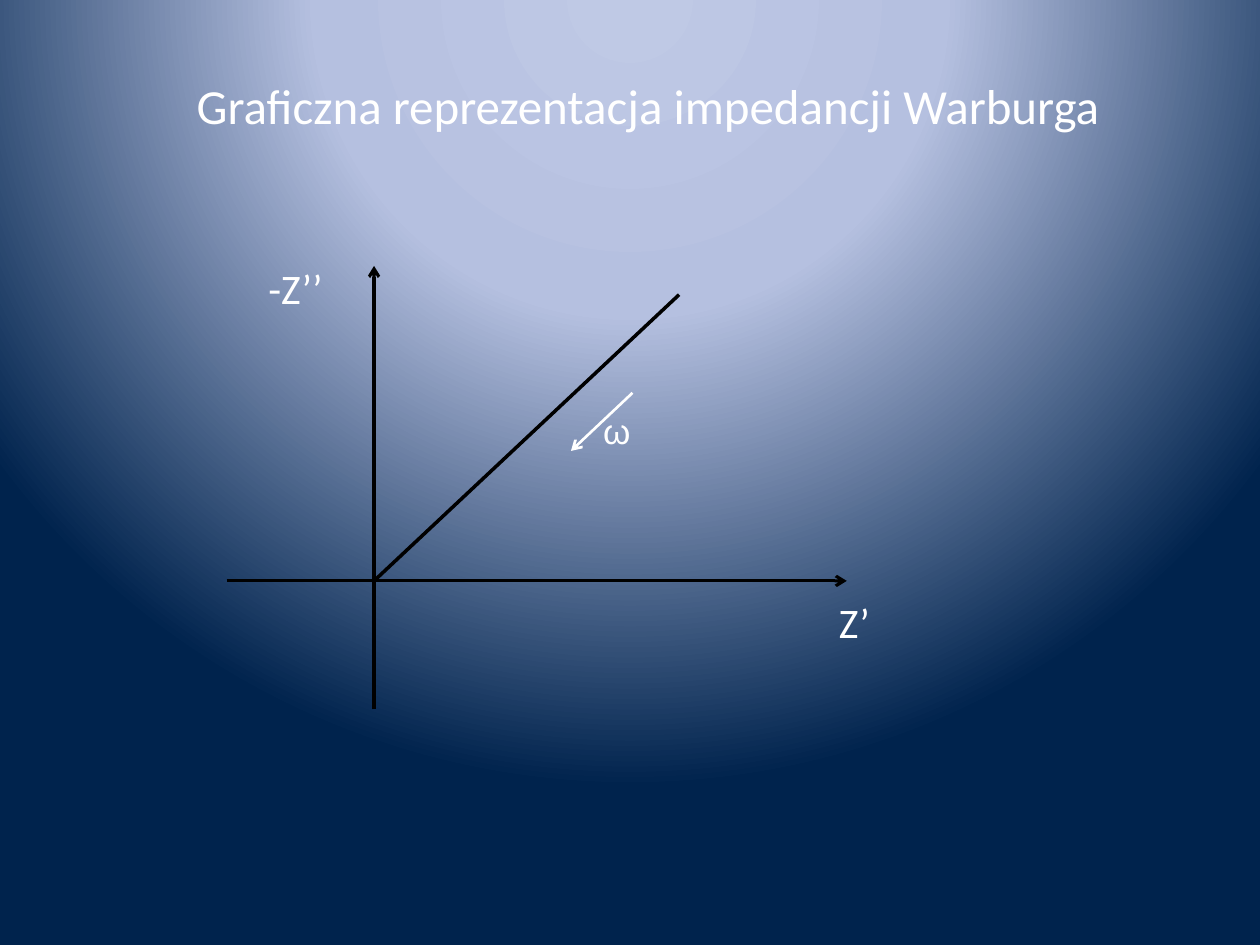
"""Build a slide with the Nyquist plot of the Warburg impedance."""
from dataclasses import dataclass

from lxml.etree import SubElement
from pptx import Presentation
from pptx.dml.color import RGBColor
from pptx.enum.shapes import MSO_CONNECTOR as Connector
from pptx.enum.text import MSO_ANCHOR as Anchor, MSO_AUTO_SIZE as AutoSize, PP_ALIGN as Align
from pptx.oxml import parse_xml
from pptx.oxml.ns import nsdecls, qn
from pptx.shapes.base import BaseShape
from pptx.slide import Slide
from pptx.util import Cm, Pt

WHITE = RGBColor(0xFF, 0xFF, 0xFF)
BLACK = RGBColor(0x00, 0x00, 0x00)
GRADIENT = (
    (0, RGBColor(0xBF, 0xC9, 0xE5)),
    (40, RGBColor(0xB5, 0xC0, 0xE0)),
    (100, RGBColor(0x00, 0x23, 0x4D)),
)
ORIGIN_X, ORIGIN_Y = 7.54, 11.71


@dataclass
class Label:
    text: str
    left: float
    top: float
    width: float
    height: float
    size: float
    font: str = "Calibri"


@dataclass
class Line:
    start: tuple[float, float]
    end: tuple[float, float]
    width: float
    color: RGBColor = BLACK
    arrow: bool = True


TITLE = Label("Graficzna reprezentacja impedancji Warburga", 3.71, 1.4, 18.9, 1.45, 28)
LABELS = (
    Label("Z’", 16.66, 11.91, 1.14, 1.27, 24),
    Label("-Z’’", 5.16, 5.16, 1.63, 1.27, 24),
    Label("ω", 11.91, 8.13, 0.99, 1.12, 20, "Arial"),
)
LINES = (
    Line((4.57, ORIGIN_Y), (17.07, ORIGIN_Y), 1.75),
    Line((ORIGIN_X, 14.3), (ORIGIN_X, 5.36), 1.75),
    Line((ORIGIN_X, ORIGIN_Y), (13.69, 5.94), 2, arrow=False),
    Line((12.75, 7.92), (11.51, 9.09), 1.5, WHITE),
)


def set_background(slide: Slide) -> None:
    """Fill the background with a circular gradient centred above the slide."""
    stops = "".join(
        f'<a:gs pos="{position * 1000}"><a:srgbClr val="{color}"/></a:gs>'
        for position, color in GRADIENT
    )
    background = parse_xml(
        f'<p:bg {nsdecls("p", "a")}><p:bgPr><a:gradFill rotWithShape="1">'
        f'<a:gsLst>{stops}</a:gsLst><a:path path="circle">'
        '<a:fillToRect l="50000" t="-80000" r="50000" b="180000"/></a:path>'
        "</a:gradFill><a:effectLst/></p:bgPr></p:bg>"
    )
    slide.element.find(qn("p:cSld")).insert(0, background)


def write_label(shape: BaseShape, label: Label) -> None:
    """Place a shape and write its text."""
    shape.left, shape.top = Cm(label.left), Cm(label.top)
    shape.width, shape.height = Cm(label.width), Cm(label.height)
    frame = shape.text_frame
    frame.word_wrap = False
    frame.auto_size = AutoSize.SHAPE_TO_FIT_TEXT
    frame.vertical_anchor = Anchor.TOP
    paragraph = frame.paragraphs[0]
    paragraph.alignment = Align.LEFT
    run = paragraph.add_run()
    run.text = label.text
    run.font.name = label.font
    run.font.size = Pt(label.size)
    run.font.color.rgb = WHITE


def add_line(slide: Slide, line: Line) -> None:
    """Draw a straight line, with an open arrowhead if asked for."""
    connector = slide.shapes.add_connector(
        Connector.STRAIGHT, *map(Cm, line.start), *map(Cm, line.end)
    )
    connector.line.color.rgb = line.color
    connector.line.width = Pt(line.width)
    properties = connector.element.spPr
    if line.arrow:
        SubElement(properties.find(qn("a:ln")), qn("a:tailEnd"), type="arrow")
    SubElement(properties, qn("a:effectLst"))


def main() -> None:
    """Create and save the presentation."""
    presentation = Presentation()
    presentation.slide_width, presentation.slide_height = Cm(25.4), Cm(19.05)
    slide = presentation.slides.add_slide(presentation.slide_layouts[5])
    set_background(slide)
    write_label(slide.shapes.title, TITLE)
    for line in LINES:
        add_line(slide, line)
    for label in LABELS:
        write_label(slide.shapes.add_textbox(0, 0, 0, 0), label)
    presentation.save("out.pptx")


if __name__ == "__main__":
    main()
